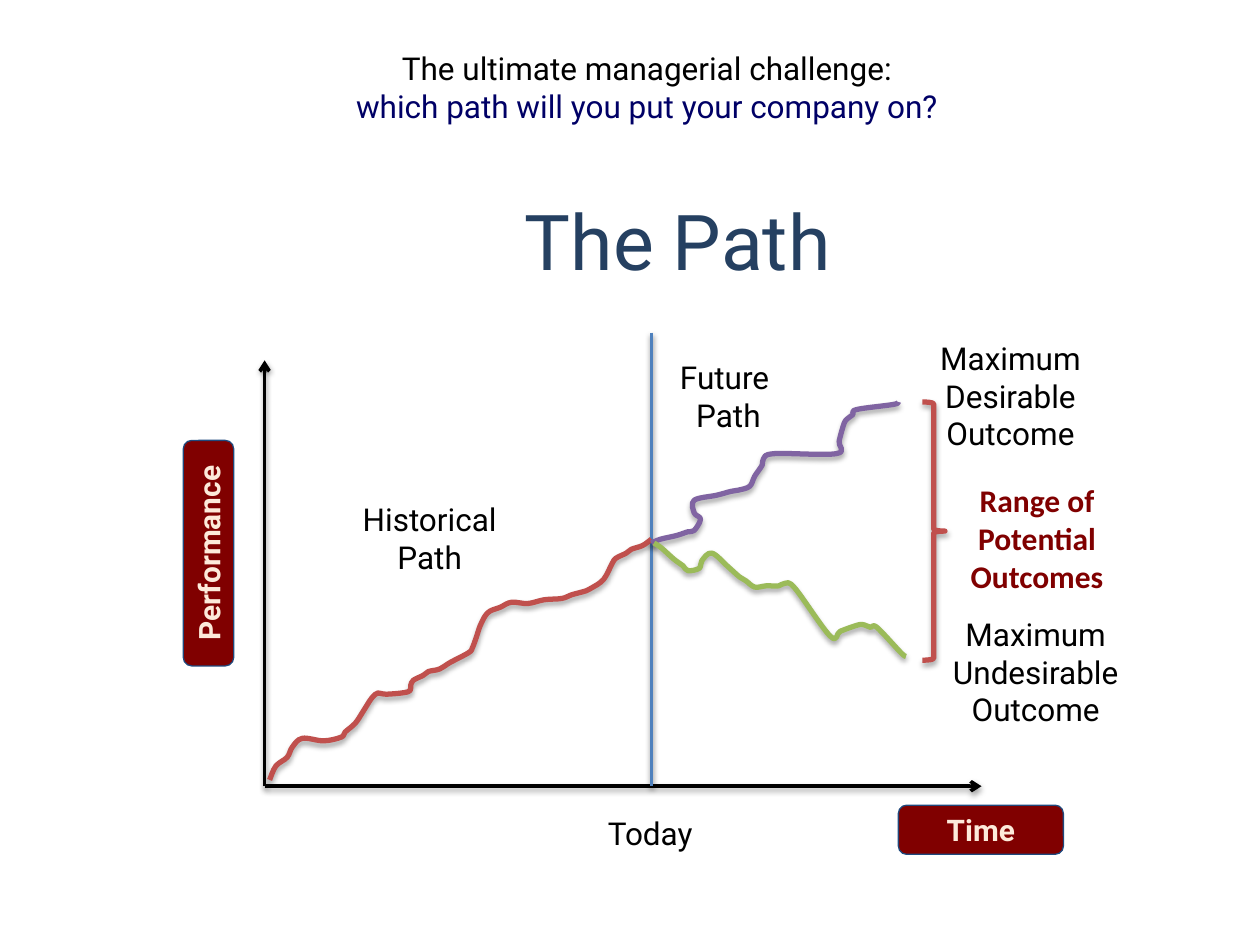
import math
from dataclasses import dataclass

import pptx
import pptx.dml.color
import pptx.enum.shapes
import pptx.enum.text
import pptx.oxml.ns
import pptx.util
from lxml import etree

COLUMNS, ROWS = 100, 75
CELL = pptx.util.Inches(0.1)
FINE = 1000  # curve units in one cell
SHAPES = pptx.enum.shapes.MSO_SHAPE
ANCHOR = pptx.enum.text.MSO_ANCHOR
FIT = pptx.enum.text.MSO_AUTO_SIZE
qn = pptx.oxml.ns.qn


@dataclass(frozen=True)
class Theme:
    font: str = "Roboto"
    accent_font: str = "Calibri"
    title_size: int = 44
    body_size: int = 18
    badge_size: int = 17
    ink: str = "000000"
    title: str = "254061"
    question: str = "000066"
    maroon: str = "800000"
    cream: str = "FDEADA"
    badge_edge: str = "1F497D"
    today: str = "4F81BD"
    history: str = "C0504D"
    rise: str = "8064A2"
    fall: str = "9BBB59"
    axis_width: int = 2
    path_width: int = 3


THEME = Theme()


@dataclass(frozen=True)
class Frame:
    """Place on the grid, in columns and rows."""
    left: float
    top: float
    width: float
    height: float

    def lengths(self) -> list[int]:
        return [cells(n) for n in (self.left, self.top, self.width, self.height)]


@dataclass(frozen=True)
class Label:
    frame: Frame
    lines: tuple[str, ...]
    colors: tuple[str, ...] = (THEME.ink,)
    font: str = THEME.font
    size: int = THEME.body_size
    bold: bool = False
    shift: float = 0  # extra left inset, in columns
    anchor: ANCHOR = ANCHOR.TOP
    fit: FIT = FIT.SHAPE_TO_FIT_TEXT


@dataclass(frozen=True)
class Badge:
    frame: Frame
    text: str
    rotation: int = 0


@dataclass(frozen=True)
class Rule:
    start: tuple[float, float]
    end: tuple[float, float]
    color: str = THEME.ink
    arrow: bool = True


@dataclass(frozen=True)
class Trend:
    color: str
    points: tuple[tuple[float, float], ...]
    rotation: float = 0


ORIGIN = (21, 62.4)
RULES = (
    Rule(ORIGIN, (77.9, 62.4)),
    Rule(ORIGIN, (21, 28.6)),
    Rule((51.7, 26.4), (51.7, 62.4), THEME.today, arrow=False),
)
BADGES = (
    Badge(Frame(7.6, 41.9, 17.9, 4), "Performance", 270),
    Badge(Frame(71.3, 63.9, 13.1, 3.9), "Time"),
)
TRENDS = (
    Trend(THEME.history, (
        (21.4, 61.9), (21.9, 60.8), (22.8, 60.1), (23.2, 59.3), (24, 58.6),
        (25.7, 58.8), (27.1, 58.5), (27.4, 58.1), (28.2, 57.4), (28.8, 56.5),
        (29.3, 55.7), (29.6, 55.3), (30, 55), (30.7, 55.1), (32.4, 54.9),
        (32.6, 54.4), (32.8, 54), (33.6, 53.6), (34, 53.3), (34.9, 53.1),
        (35.7, 52.6), (37.2, 51.8), (37.5, 51.4), (37.8, 50.6), (38.1, 49.7),
        (38.5, 48.9), (38.9, 48.5), (39.7, 48.2), (40.6, 47.8), (41.9, 47.9),
        (43.2, 47.6), (44.6, 47.5), (45.4, 47.2), (46.5, 46.9), (46.9, 46.7),
        (47.9, 46), (48.6, 44.7), (48.9, 44.3), (49.7, 43.9), (50.1, 43.6),
        (51, 43.3), (51.7, 42.8))),
    Trend(THEME.rise, (
        (51.7, 43.1), (52.4, 42.8), (53.7, 42.5), (54.6, 42.2), (55.1, 42.1),
        (55.6, 41.2), (55.1, 40.7), (55.1, 39.7), (56.9, 39.3), (58, 39),
        (58.6, 38.9), (59.5, 38.6), (59.9, 37.8), (60.5, 36.9), (60.6, 36.4),
        (61.5, 36), (66.4, 36), (66.6, 35), (67, 33.6), (67.3, 33.2),
        (67.7, 32.9), (68, 32.5), (70.9, 32.1), (71.3, 31.9))),
    Trend(THEME.fall, (
        (51.9, 43.1), (52.5, 43.5), (53.5, 44.4), (54.2, 44.9), (54.6, 45.3),
        (55.5, 45.1), (55.7, 44.5), (56.5, 43.9), (57.8, 45), (58.7, 45.8),
        (59.2, 46.1), (59.9, 46.6), (60.8, 46.5), (61.8, 46.5), (62.3, 46.3),
        (63.1, 46.7), (65.9, 50.5), (66.7, 50.1), (68.1, 49.6), (68.6, 49.6),
        (69.1, 49.8), (69.6, 49.8), (71.5, 51.8), (71.9, 52.1)), 54.6),
)
BRACE = Frame(73.2, 31.9, 1.8, 20.5)
LABELS = (
    Label(Frame(3.5, 12.8, 90, 12.5), ("The Path",), (THEME.title,), size=THEME.title_size,
          shift=10.6, anchor=ANCHOR.MIDDLE, fit=FIT.NONE),
    Label(Frame(43.5, 64.1, 16.2, 4), ("Today",)),
    Label(Frame(72.1, 26.4, 16.2, 10.1), ("Maximum Desirable Outcome",)),
    Label(Frame(74.1, 48.3, 16.2, 10.1), ("Maximum Undesirable\nOutcome",)),
    Label(Frame(26, 39.2, 16.2, 7.1), ("Historical\nPath",)),
    Label(Frame(74.2, 37.7, 16.2, 10.1), ("Range of Potential Outcomes",),
          (THEME.maroon,), THEME.accent_font, bold=True),
    Label(Frame(22.5, 3.4, 57.7, 7.1),
          ("The ultimate managerial challenge:",
           "which path will you put your company on?"),
          (THEME.ink, THEME.question)),
    Label(Frame(49.4, 27.9, 16.2, 4), ("Future", " Path")),
)


def cells(count: float) -> int:
    return round(count * CELL)


def rgb(color: str) -> pptx.dml.color.RGBColor:
    return pptx.dml.color.RGBColor.from_string(color)


def set_line(shape, color: str, width: float) -> None:
    shape.line.color.rgb = rgb(color)
    shape.line.width = pptx.util.Pt(width)


def add_shadow(shape, opacity: int, distance: float) -> None:
    """Soft shadow straight below; call once the line is set."""
    effects = etree.SubElement(shape._element.spPr, qn("a:effectLst"))
    shadow = etree.SubElement(
        effects, qn("a:outerShdw"), blurRad=str(pptx.util.Pt(3.1)),
        dist=str(pptx.util.Pt(distance)), dir="5400000", rotWithShape="0")
    color = etree.SubElement(shadow, qn("a:srgbClr"), val=THEME.ink)
    etree.SubElement(color, qn("a:alpha"), val=str(opacity * 1000))


def style_paragraph(para, text: str, color: str, font: str, size: int, bold: bool) -> None:
    para.text = text.replace("\n", "\v")
    para.alignment = pptx.enum.text.PP_ALIGN.CENTER
    para.font.name, para.font.size, para.font.bold = font, pptx.util.Pt(size), bold
    para.font.color.rgb = rgb(color)


def draw_label(page, label: Label) -> None:
    frame = page.shapes.add_textbox(*label.frame.lengths()).text_frame
    frame.word_wrap = True
    frame.auto_size = label.fit
    frame.vertical_anchor = label.anchor
    frame.margin_left = cells(1 + label.shift)
    for index, text in enumerate(label.lines):
        para = frame.add_paragraph() if index else frame.paragraphs[0]
        color = label.colors[min(index, len(label.colors) - 1)]
        style_paragraph(para, text, color, label.font, label.size, label.bold)


def draw_badge(page, badge: Badge) -> None:
    box = page.shapes.add_shape(SHAPES.ROUNDED_RECTANGLE, *badge.frame.lengths())
    box.rotation = badge.rotation
    box.fill.solid()
    box.fill.fore_color.rgb = rgb(THEME.maroon)
    set_line(box, THEME.badge_edge, 0.75)
    box.shadow.inherit = False
    box.text_frame.vertical_anchor = ANCHOR.MIDDLE
    para = box.text_frame.paragraphs[0]
    para.space_before = pptx.util.Pt(0.2 * THEME.badge_size)
    style_paragraph(para, badge.text, THEME.cream, THEME.font, THEME.badge_size, True)


def draw_rule(page, rule: Rule) -> None:
    ends = [cells(n) for n in rule.start + rule.end]
    line = page.shapes.add_connector(pptx.enum.shapes.MSO_CONNECTOR.STRAIGHT, *ends)
    set_line(line, rule.color, THEME.axis_width)
    if rule.arrow:
        etree.SubElement(line.line._ln, qn("a:tailEnd"), type="arrow")
    add_shadow(line, 38, 1.6)


def draw_outline(shape, color: str) -> None:
    shape.fill.background()
    set_line(shape, color, THEME.path_width)
    add_shadow(shape, 35, 1.8)


def turn_back(trend: Trend) -> list[tuple[float, float]]:
    """Points in fine units before the shape's rotation about its middle."""
    middle = complex(*trend.points[0]) / 2 + complex(*trend.points[-1]) / 2
    angle = math.radians(-trend.rotation)
    turn = complex(math.cos(angle), math.sin(angle))
    turned = [(middle + (complex(*point) - middle) * turn) * FINE for point in trend.points]
    return [(spot.real, spot.imag) for spot in turned]


def round_corners(shape) -> None:
    """Turn the straight segments into a smooth run of Bézier curves."""
    nodes = list(shape._element.iter(qn("a:pt")))
    spots = [complex(int(node.get("x")), int(node.get("y"))) for node in nodes]
    padded = [spots[0], *spots, spots[-1]]
    for node, a, b, c, d in zip(nodes[1:], padded, padded[1:], padded[2:], padded[3:]):
        segment = node.getparent()
        segment.tag = qn("a:cubicBezTo")
        for control in (b + (c - a) / 6, c - (d - b) / 6):
            node.addprevious(etree.Element(
                qn("a:pt"), x=str(round(control.real)), y=str(round(control.imag))))


def draw_trend(page, trend: Trend) -> None:
    start, *rest = turn_back(trend)
    builder = page.shapes.build_freeform(*start, scale=CELL / FINE)
    builder.add_line_segments(rest, close=False)
    shape = builder.convert_to_shape()
    shape.rotation = trend.rotation
    round_corners(shape)
    draw_outline(shape, trend.color)


def main() -> None:
    deck = pptx.Presentation()
    deck.slide_width, deck.slide_height = cells(COLUMNS), cells(ROWS)
    page = deck.slides.add_slide(deck.slide_layouts[6])
    # Axes and their names
    for badge in BADGES:
        draw_badge(page, badge)
    for rule in RULES:
        draw_rule(page, rule)
    # Past and future paths, with the range between the outcomes
    for trend in TRENDS:
        draw_trend(page, trend)
    draw_outline(page.shapes.add_shape(SHAPES.RIGHT_BRACE, *BRACE.lengths()), THEME.history)
    # Title and captions
    for label in LABELS:
        draw_label(page, label)
    deck.save("out.pptx")


if __name__ == "__main__":
    main()
